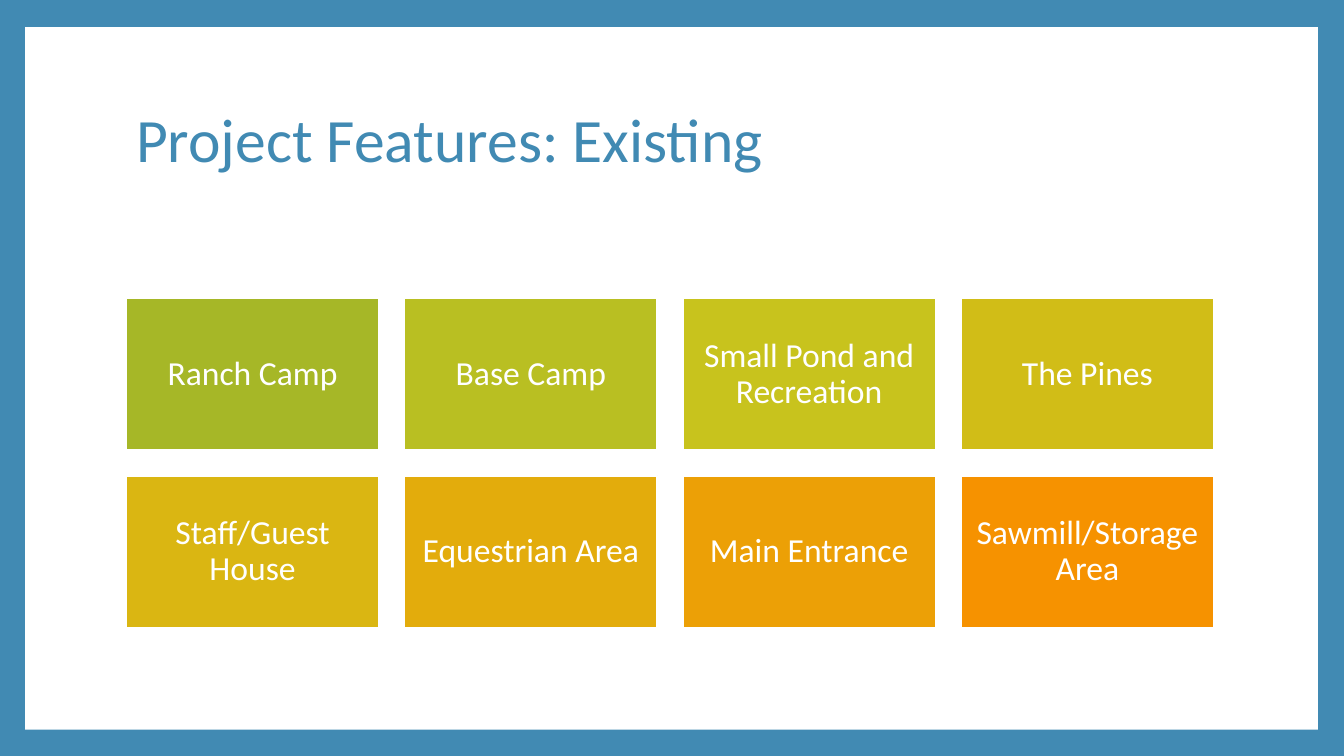
from pptx import Presentation
from pptx.dml.color import RGBColor
from pptx.enum.shapes import MSO_SHAPE as Shape
from pptx.enum.text import MSO_ANCHOR as Anchor, PP_ALIGN as Align
from pptx.util import Inches, Pt

BLUE = RGBColor(0x41, 0x8A, 0xB3)
WHITE = RGBColor(0xFF, 0xFF, 0xFF)
FEATURES = [
    ("Ranch Camp", RGBColor(0xA6, 0xB7, 0x27)),
    ("Base Camp", RGBColor(0xB9, 0xBF, 0x22)),
    ("Small Pond and Recreation", RGBColor(0xC8, 0xC3, 0x1D)),
    ("The Pines", RGBColor(0xD1, 0xBD, 0x17)),
    ("Staff/Guest House", RGBColor(0xDA, 0xB6, 0x12)),
    ("Equestrian Area", RGBColor(0xE3, 0xAC, 0x0C)),
    ("Main Entrance", RGBColor(0xEC, 0xA0, 0x06)),
    ("Sawmill/Storage Area", RGBColor(0xF6, 0x92, 0x00)),
]


class FeaturePage:
    """Draw a framed page with a title and a grid of feature tiles."""

    font_name = "Calibri"
    columns = 4
    left, top = 1.25, 2.96
    tile_width, tile_height = 2.51, 1.51
    gap = 0.25

    def __init__(self, deck):
        self.page = deck.slides.add_slide(deck.slide_layouts[5])
        fill = self.page.background.fill
        fill.solid()
        fill.fore_color.rgb = BLUE

    def add_box(self, left, top, width, height, color):
        box = self.page.shapes.add_shape(
            Shape.RECTANGLE, Inches(left), Inches(top), Inches(width), Inches(height))
        box.shadow.inherit = False
        box.fill.solid()
        box.fill.fore_color.rgb = color
        box.line.fill.background()
        return box

    def set_text(self, box, text, size, color, align):
        frame = box.text_frame
        frame.text = text
        frame.word_wrap = True
        frame.vertical_anchor = Anchor.MIDDLE
        para = frame.paragraphs[0]
        para.alignment = align
        para.line_spacing = 0.9
        for span in para.runs:
            span.font.name = self.font_name
            span.font.size = Pt(size)
            span.font.color.rgb = color

    def add_panel(self):
        panel = self.add_box(0.25, 0.27, 12.82, 6.97, WHITE)
        self.page.shapes.title.element.addprevious(panel.element)

    def add_title(self, text):
        title = self.page.shapes.title
        title.left, title.top = Inches(self.left), Inches(0.67)
        title.width, title.height = Inches(10.8), Inches(1.48)
        self.set_text(title, text, 44, BLUE, Align.LEFT)

    def add_tile(self, index, text, color):
        row, column = divmod(index, self.columns)
        tile = self.add_box(
            self.left + column * (self.tile_width + self.gap),
            self.top + row * (self.tile_height + self.gap),
            self.tile_width, self.tile_height, color)
        tile.line.color.rgb = WHITE
        tile.line.width = Pt(1.5)
        frame = tile.text_frame
        frame.margin_left = frame.margin_right = Inches(0.1)
        frame.margin_top = frame.margin_bottom = Inches(0.1)
        self.set_text(tile, text, 24, WHITE, Align.CENTER)


def main():
    deck = Presentation()
    deck.slide_width, deck.slide_height = Inches(13.33), Inches(7.5)
    page = FeaturePage(deck)
    page.add_panel()
    page.add_title("Project Features: Existing")
    for index, (text, color) in enumerate(FEATURES):
        page.add_tile(index, text, color)
    deck.save("out.pptx")


if __name__ == "__main__":
    main()
